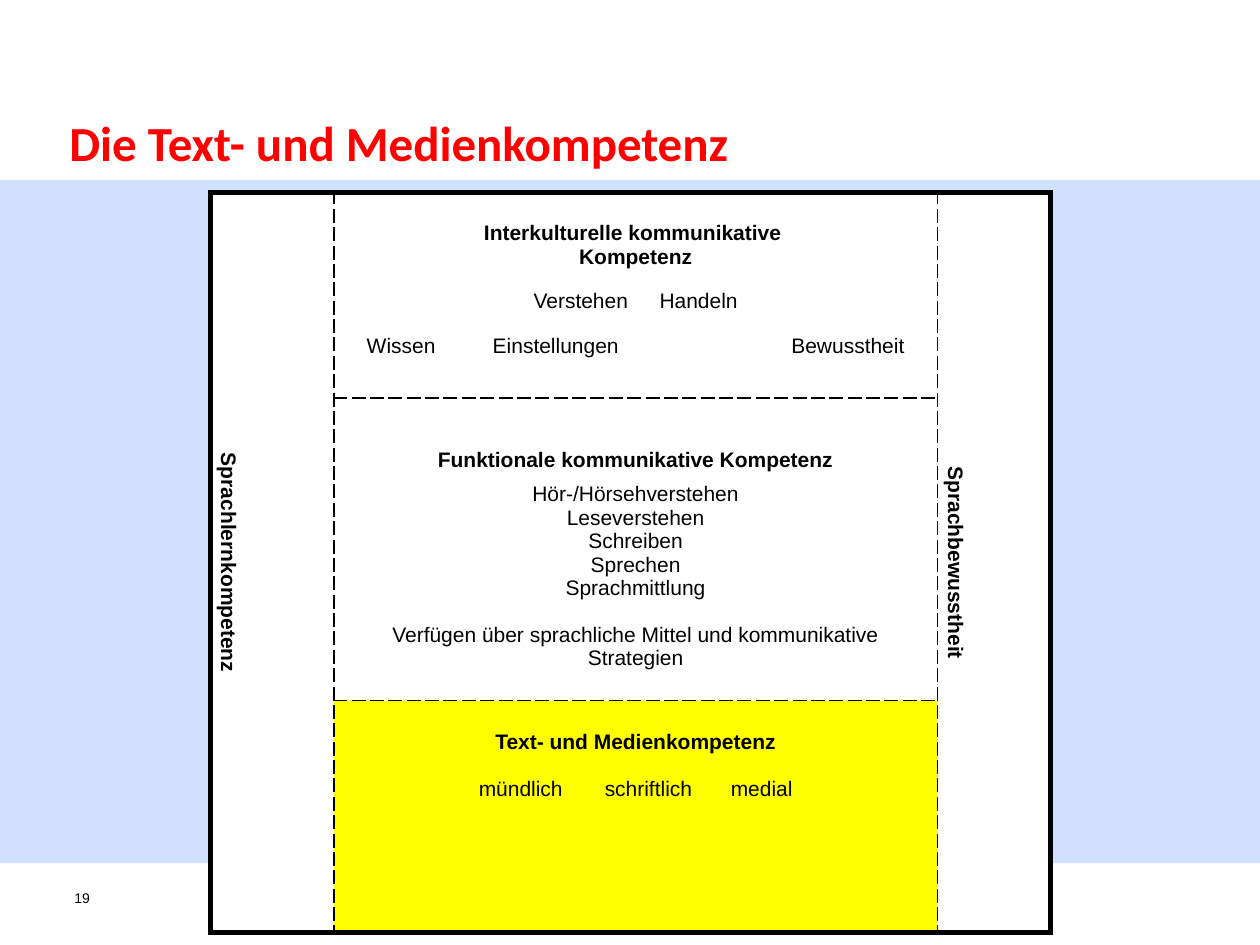
from lxml.etree import SubElement
from pptx import Presentation
from pptx.dml.color import RGBColor
from pptx.enum.shapes import MSO_SHAPE
from pptx.enum.text import MSO_ANCHOR, PP_ALIGN
from pptx.oxml.ns import qn
from pptx.util import Inches, Pt


def color(value):
    return RGBColor.from_string(value)


def add_border(cell, side, outer):
    line = SubElement(cell._tc.get_or_add_tcPr(), qn(f"a:ln{side}"), w=str(Pt(3 if outer else 1)))
    fill = SubElement(line, qn("a:solidFill"))
    SubElement(fill, qn("a:srgbClr"), val="000000")
    SubElement(line, qn("a:prstDash"), val="solid" if outer else "dash")


presentation = Presentation()
presentation.slide_width = Inches(10)
presentation.slide_height = Inches(7.5)
slide = presentation.slides.add_slide(presentation.slide_layouts[6])

band = slide.shapes.add_shape(MSO_SHAPE.RECTANGLE, 0, Inches(1.43), Inches(10), Inches(5.42))
band.shadow.inherit = False
band.fill.solid()
band.fill.fore_color.rgb = color("6699FF")
band.line.fill.background()
band_color = band.fill._xPr.find(qn("a:solidFill"))[0]
SubElement(band_color, qn("a:alpha"), val="30000")

labels = [
    ("Die Text- und Medienkompetenz", 0.55, 0.89, 8.82, 0.47, "Calibri", 28, "FF0000", True),
    ("19", 0.59, 7.06, 0.32, 0.37, "Arial", 8, "000000", False),
]
for text, left, top, width, height, font_name, size, font_color, bold in labels:
    box = slide.shapes.add_textbox(Inches(left), Inches(top), Inches(width), Inches(height))
    frame = box.text_frame
    frame.word_wrap = True
    frame.margin_left = frame.margin_right = frame.margin_top = frame.margin_bottom = 0
    paragraph = frame.paragraphs[0]
    paragraph.text = text
    paragraph.font.name = font_name
    paragraph.font.size = Pt(size)
    paragraph.font.bold = bold
    paragraph.font.color.rgb = color(font_color)

column_widths = [0.98, 4.79, 0.9]
row_heights = [1.63, 2.4, 1.84]
table = slide.shapes.add_table(
    3, 3, Inches(1.67), Inches(1.53), Inches(sum(column_widths)), Inches(sum(row_heights))
).table
table.first_row = False
table.horz_banding = False
for column, width in zip(table.columns, column_widths):
    column.width = Inches(width)
for row, height in zip(table.rows, row_heights):
    row.height = Inches(height)

for row in range(3):
    for column in range(3):
        cell = table.cell(row, column)
        add_border(cell, "L", column == 0)
        add_border(cell, "R", column == 2)
        if column == 1 or row == 0:
            add_border(cell, "T", row == 0)
        if column == 1 or row == 2:
            add_border(cell, "B", row == 2)
        elif row == 0:
            add_border(cell, "B", True)
        cell.fill.solid()
        cell.fill.fore_color.rgb = color("FFFF00" if (row, column) == (2, 1) else "FFFFFF")

for column in (0, 2):
    side_cell = table.cell(0, column)
    side_cell.merge(table.cell(2, column))
    side_cell._tc.get_or_add_tcPr().set("vert", "vert")
table.cell(0, 0).vertical_anchor = MSO_ANCHOR.BOTTOM

contents = [
    (0, 0, 0.05, [("Sprachlernkompetenz", True, 0, 6)]),
    (0, 2, 0.05, [("Sprachbewusstheit", True, 0, 6)]),
    (0, 1, 0.23, [
        ("Interkulturelle kommunikative ", True, 0, 0),
        ("Kompetenz", True, 0, 6),
        ("Verstehen \tHandeln", False, 6, 6),
        ("Wissen\tEinstellungen\tBewusstheit", False, 6, 6),
    ]),
    (1, 1, 0.4, [
        ("Funktionale kommunikative Kompetenz", True, 0, 6),
        ("Hör-/Hörsehverstehen", False, 0, 0),
        ("Leseverstehen", False, 0, 0),
        ("Schreiben", False, 0, 0),
        ("Sprechen", False, 0, 0),
        ("Sprachmittlung", False, 0, 0),
        ("Verfügen über sprachliche Mittel und kommunikative Strategien", False, 13, 0),
    ]),
    (2, 1, 0.24, [
        ("Text- und Medienkompetenz", True, 0, 0),
        ("mündlich\tschriftlich\tmedial", False, 13, 0),
    ]),
]
for row, column, margin_top, lines in contents:
    cell = table.cell(row, column)
    cell.margin_top = Inches(margin_top)
    frame = cell.text_frame
    for index, (text, bold, before, after) in enumerate(lines):
        paragraph = frame.add_paragraph() if index else frame.paragraphs[0]
        paragraph.text = text
        paragraph.alignment = PP_ALIGN.CENTER
        paragraph.space_before = Pt(before)
        paragraph.space_after = Pt(after)
        if "\t" in text:
            tabs = SubElement(paragraph._p.get_or_add_pPr(), qn("a:tabLst"))
            for position in (1, 3.37 if "Wissen" in text else 2):
                SubElement(tabs, qn("a:tab"), pos=str(Inches(position)), algn="l")
        paragraph.font.name = "Arial"
        paragraph.font.size = Pt(12)
        paragraph.font.bold = bold
        paragraph.font.color.rgb = color("000000")

presentation.save("out.pptx")
